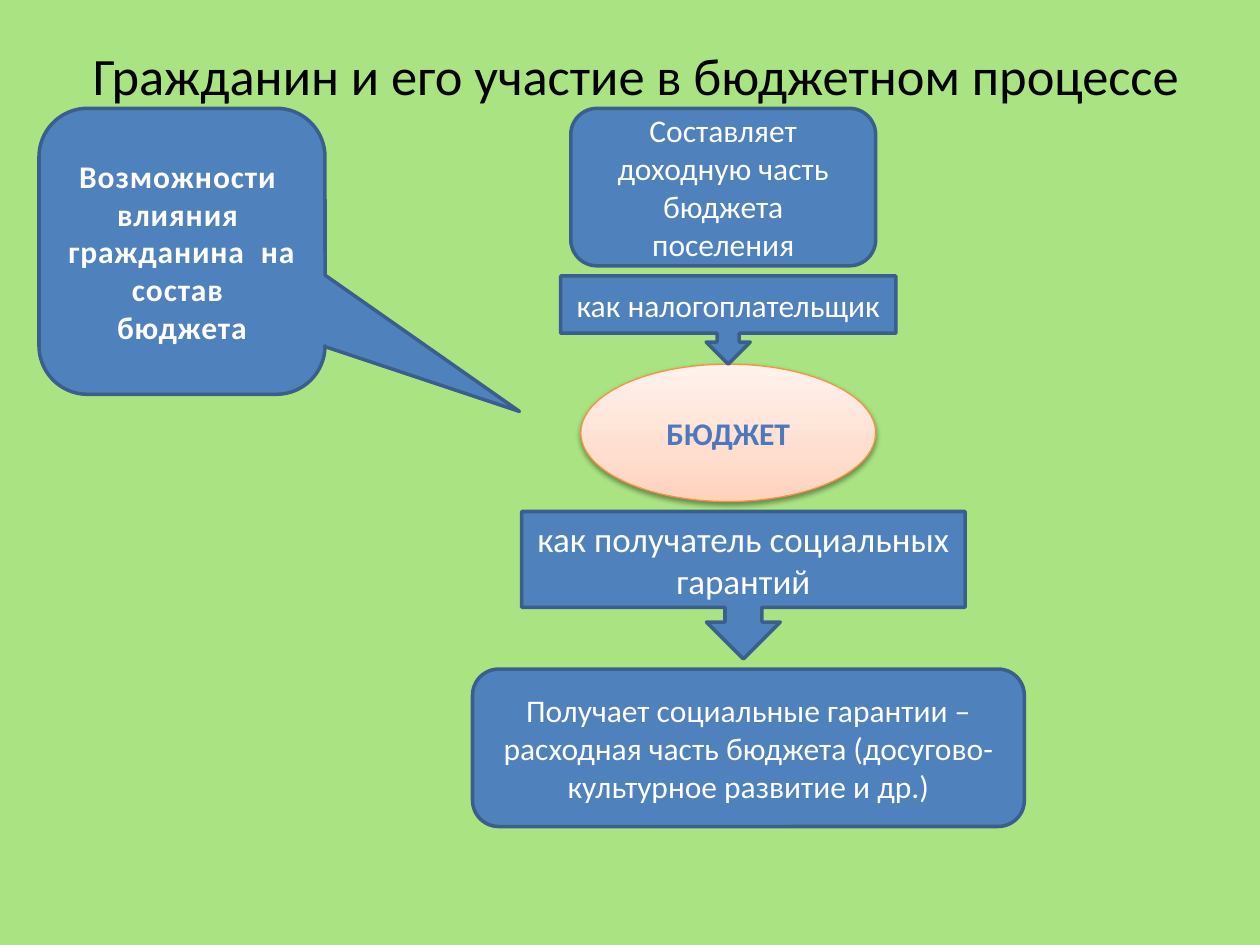
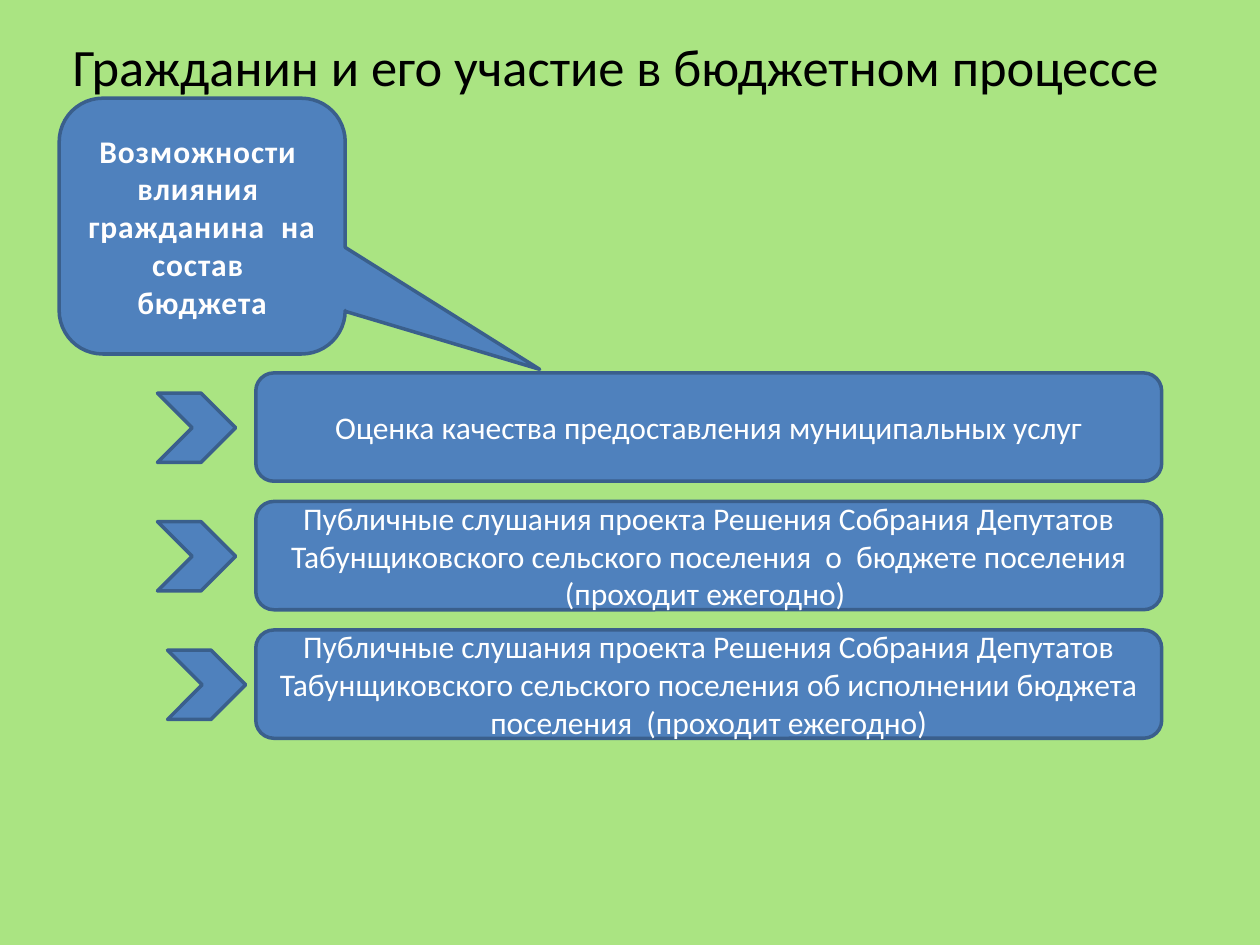
from lxml import etree
from pptx import Presentation
from pptx.dml.color import RGBColor
from pptx.enum.shapes import MSO_SHAPE
from pptx.enum.text import MSO_ANCHOR, PP_ALIGN
from pptx.oxml import parse_xml
from pptx.util import Inches, Pt

GREEN = RGBColor(0xAA, 0xE4, 0x82)
BLUE = RGBColor(0x4F, 0x81, 0xBD)
DARK_BLUE = RGBColor(0x3A, 0x5F, 0x8C)
TEXT_BLUE = RGBColor(0x4D, 0x79, 0xBC)
ORANGE = RGBColor(0xF6, 0x92, 0x40)
OUTLINE_ORANGE = RGBColor(0xE7, 0x87, 0x38)
WHITE = RGBColor(0xFF, 0xFF, 0xFF)
WARM_WHITE = RGBColor(0xFF, 0xFE, 0xFE)
BLACK = RGBColor(0, 0, 0)
PEACH_STOPS = [(0, RGBColor(0xFF, 0xD2, 0xBD)), (35, RGBColor(0xFF, 0xDE, 0xD0)),
               (100, RGBColor(0xFF, 0xF2, 0xED))]

FONT = "Calibri"
TITLE = "Гражданин и его участие в бюджетном процессе"
INFLUENCE = "Возможности  влияния  гражданина  на состав  бюджета"
HEARINGS = "Публичные слушания проекта Решения Собрания Депутатов Табунщиковского сельского поселения"
PARTICIPATION = [
    # text, left edge of its chevron
    ("Оценка качества предоставления муниципальных услуг", 1.25),
    (HEARINGS + "  о  бюджете поселения (проходит ежегодно) ", 1.25),
    (HEARINGS + " об исполнении бюджета поселения  (проходит ежегодно)", 1.33),
]
FIRST_ROW_TOP, ROW_PITCH = 2.96, 1.02

A = "http://schemas.openxmlformats.org/drawingml/2006/main"


def drawing_xml(markup):
    """Parse one DrawingML element written with the prefix a."""
    return parse_xml(markup.replace(" ", f' xmlns:a="{A}" ', 1))


def shadow_xml(blur, distance, opacity):
    return drawing_xml(
        f'<a:effectLst ><a:outerShdw blurRad="{Pt(blur)}" dist="{Pt(distance)}" dir="5400000">'
        f'<a:srgbClr val="{BLACK}"><a:alpha val="{opacity * 1000}"/></a:srgbClr>'
        '</a:outerShdw></a:effectLst>')


def write(text_frame, text, size, color, bold=False):
    text_frame.word_wrap = True
    text_frame.vertical_anchor = MSO_ANCHOR.MIDDLE
    paragraph = text_frame.paragraphs[0]
    paragraph.alignment = PP_ALIGN.CENTER
    paragraph.add_run().text = text
    font = paragraph.font
    font.name, font.size, font.bold = FONT, Pt(size), bold
    font.color.rgb = color
    return paragraph


def add_block(slide, preset, left, top, width, height, text="", size=18, color=WHITE, bold=False):
    """Add a blue preset shape with a dark outline and centred text."""
    block = slide.shapes.add_shape(
        preset, Inches(left), Inches(top), Inches(width), Inches(height))
    block.shadow.inherit = False
    block.fill.solid()
    block.fill.fore_color.rgb = BLUE
    block.line.color.rgb = DARK_BLUE
    block.line.width = Pt(2)
    if text:
        write(block.text_frame, text, size, color, bold)
    return block


def add_influence_callout(slide, left, top, height):
    callout = add_block(slide, MSO_SHAPE.ROUNDED_RECTANGULAR_CALLOUT, left, top, 2.27, height,
                        INFLUENCE, color=WARM_WHITE, bold=True)
    for index, value in enumerate((1.18, 0.56, 0.17)):
        callout.adjustments[index] = value
    lettering = callout.text_frame.paragraphs[0].runs[0].font
    lettering.color.rgb = WARM_WHITE
    properties = callout.text_frame.paragraphs[0].runs[0]._r.get_or_add_rPr()
    properties.set("spc", "50")
    properties.insert(0, drawing_xml(
        f'<a:ln w="{Pt(1)}"><a:solidFill><a:srgbClr val="{OUTLINE_ORANGE}"/></a:solidFill></a:ln>'))
    properties.append(shadow_xml(2, 1, 40))


def add_budget_ellipse(slide):
    budget = add_block(slide, MSO_SHAPE.OVAL, 4.61, 2.89, 2.34, 1.09,
                       "БЮДЖЕТ", color=TEXT_BLUE, bold=True)
    budget.line.color.rgb = ORANGE
    budget.line.width = Pt(0.75)
    budget.fill.gradient()
    budget.fill.gradient_angle = 90
    properties = budget._element.spPr
    stops = properties.find(f".//{{{A}}}gsLst")
    for stop in list(stops):
        stops.remove(stop)
    for position, color in PEACH_STOPS:
        stop = etree.SubElement(stops, f"{{{A}}}gs", pos=str(position * 1000))
        etree.SubElement(stop, f"{{{A}}}srgbClr", val=str(color))
    properties.replace(properties.find(f"{{{A}}}effectLst"), shadow_xml(3.1, 1.6, 38))


def add_titled_slide(deck, title_left, title_top):
    slide = deck.slides.add_slide(deck.slide_layouts[6])
    slide.background.fill.solid()
    slide.background.fill.fore_color.rgb = GREEN
    title = slide.shapes.add_textbox(
        Inches(title_left), Inches(title_top), Inches(9), Inches(0.72))
    write(title.text_frame, TITLE, 30, BLACK)
    return slide


def build_budget_flow(deck):
    slide = add_titled_slide(deck, 0.55, 0.23)
    add_budget_ellipse(slide)
    add_block(slide, MSO_SHAPE.DOWN_ARROW_CALLOUT, 4.14, 4.06, 3.52, 1.17,
              "как получатель социальных гарантий", size=20)
    add_block(slide, MSO_SHAPE.ROUNDED_RECTANGLE, 4.53, 0.86, 2.42, 1.25,
              "Составляет доходную часть бюджета поселения")
    add_influence_callout(slide, 0.31, 0.86, 2.27)
    add_block(slide, MSO_SHAPE.DOWN_ARROW_CALLOUT, 4.45, 2.19, 2.66, 0.7,
              "как налогоплательщик ")
    add_block(slide, MSO_SHAPE.ROUNDED_RECTANGLE, 3.75, 5.31, 4.38, 1.25,
              "Получает социальные гарантии – расходная часть бюджета "
              "(досугово-культурное развитие и др.)")


def build_participation_list(deck):
    slide = add_titled_slide(deck, 0.39, 0.16)
    for row, (text, chevron_left) in enumerate(PARTICIPATION):
        top = FIRST_ROW_TOP + row * ROW_PITCH
        add_block(slide, MSO_SHAPE.CHEVRON, chevron_left, top + 0.16, 0.62, 0.55)
        add_block(slide, MSO_SHAPE.ROUNDED_RECTANGLE, 2.03, top, 7.19, 0.86, text)
    add_influence_callout(slide, 0.47, 0.78, 2.03)


def main():
    deck = Presentation()
    deck.slide_width, deck.slide_height = Inches(10), Inches(7.5)
    build_budget_flow(deck)
    build_participation_list(deck)
    deck.save("out.pptx")


if __name__ == "__main__":
    main()
